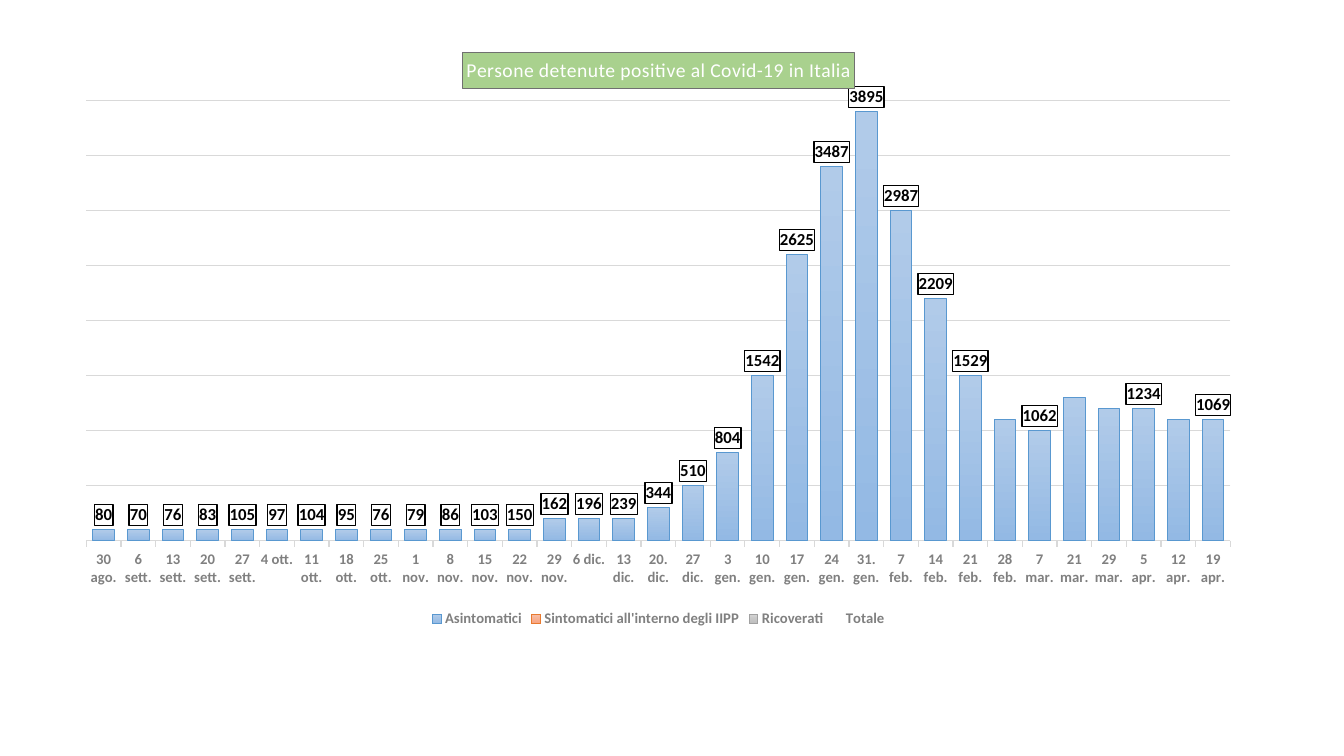
from lxml import etree
from pptx import Presentation
from pptx.chart.data import CategoryChartData
from pptx.dml.color import RGBColor
from pptx.enum.chart import XL_CHART_TYPE, XL_LABEL_POSITION, XL_LEGEND_POSITION, XL_TICK_LABEL_POSITION, XL_TICK_MARK
from pptx.oxml import parse_xml
from pptx.oxml.ns import nsdecls, qn
from pptx.util import Inches, Pt

WHITE = RGBColor(0xFF, 0xFF, 0xFF)
BLACK = RGBColor(0, 0, 0)
GREY = RGBColor(0x80, 0x80, 0x80)
GRID = RGBColor(0xD9, 0xD9, 0xD9)
TITLE_GREEN = RGBColor(0xA9, 0xD1, 0x8E)
TITLE_EDGE = RGBColor(0x70, 0x70, 0x70)
# Top colour, bottom colour and outline of each visible series
BAR_STYLES = [
    (RGBColor(0xB1, 0xCB, 0xE9), RGBColor(0x93, 0xB9, 0xE4), RGBColor(0x59, 0x98, 0xD0)),
    (RGBColor(0xF7, 0xBD, 0xA5), RGBColor(0xF8, 0xA5, 0x82), RGBColor(0xE8, 0x7A, 0x30)),
    (RGBColor(0xD2, 0xD2, 0xD2), RGBColor(0xC0, 0xC0, 0xC0), RGBColor(0xA1, 0xA1, 0xA1)),
]

DATES = [
    "30 ago.", "6 sett.", "13 sett.", "20 sett.", "27 sett.", "4 ott.", "11 ott.",
    "18 ott.", "25 ott.", "1 nov.", "8 nov.", "15 nov.", "22 nov.", "29 nov.",
    "6 dic.", "13 dic.", "20. dic.", "27 dic.", "3 gen.", "10 gen.", "17 gen.",
    "24 gen.", "31. gen.", "7 feb.", "14 feb.", "21 feb.", "28 feb.", "7 mar.",
    "21 mar.", "29 mar.", "5 apr.", "12 apr.", "19 apr.",
]
TOTALS = [
    80, 70, 76, 83, 105, 97, 104, 95, 76, 79, 86, 103, 150, 162, 196, 239, 344,
    510, 804, 1542, 2625, 3487, 3895, 2987, 2209, 1529, 1160, 1062, 1341, 1208,
    1234, 1080, 1069,
]
# Bars without labels are rounded to hundreds
ASYMPTOMATIC = [100] * 13 + [
    200, 200, 200, 300, 500, 800, 1500, 2600, 3400, 3900, 3000, 2200, 1500,
    1100, 1000, 1300, 1200, 1200, 1100, 1100,
]
SYMPTOMATIC = HOSPITALISED = [0] * len(DATES)
UNLABELLED = [26, 28, 29, 31]


def style_font(font, size, color, bold=False):
    font.name, font.size, font.bold = "Calibri", Pt(size), bold
    font.color.rgb = color


def style_line(line, color, width=0.75):
    line.color.rgb = color
    line.width = Pt(width)


def manual_layout(target=None, **shares):
    """Chart layout element with its lengths given as shares of the chart."""
    layout = etree.Element(qn("c:layout"))
    manual = etree.SubElement(layout, qn("c:manualLayout"))
    if target:
        etree.SubElement(manual, qn("c:layoutTarget")).set("val", target)
    for mode in ("xMode", "yMode"):
        etree.SubElement(manual, qn(f"c:{mode}")).set("val", "edge")
    for name, share in shares.items():
        etree.SubElement(manual, qn(f"c:{name}")).set("val", str(share))
    return layout


def place(parent, layout, index):
    for old in parent.findall(qn("c:layout")):
        parent.remove(old)
    parent.insert(index, layout)


def add_title(chart, text, size, color, spacing):
    title = chart.chart_title
    para = title.text_frame.paragraphs[0]
    span = para.add_run()
    span.text = text
    style_font(span.font, size, color)
    span.font._element.set("spc", str(spacing))
    title.format.fill.solid()
    title.format.fill.fore_color.rgb = TITLE_GREEN
    style_line(title.format.line, TITLE_EDGE)
    place(title._element, manual_layout(x=0.336, y=0.028), 1)


def style_axes(chart):
    dates = chart.category_axis
    dates.major_tick_mark = XL_TICK_MARK.OUTSIDE
    dates.tick_label_position = XL_TICK_LABEL_POSITION.LOW
    style_font(dates.tick_labels.font, 10.5, GREY, bold=True)
    style_line(dates.format.line, GRID)
    counts = chart.value_axis
    counts.minimum_scale, counts.maximum_scale, counts.major_unit = 0, 4000, 500
    style_line(counts.major_gridlines.format.line, GRID)
    counts.visible = False


def label_totals(series):
    labels = series.data_labels
    labels.show_value = True
    labels.position = XL_LABEL_POSITION.INSIDE_BASE
    style_font(labels.font, 12, BLACK, bold=True)
    # Framed white boxes
    element = labels._element
    element.find(qn("c:txPr")).addprevious(parse_xml(
        f'<c:spPr {nsdecls("c", "a")}>'
        f'<a:solidFill><a:srgbClr val="{WHITE}"/></a:solidFill>'
        f'<a:ln w="{Pt(1)}"><a:solidFill><a:srgbClr val="{BLACK}"/></a:solidFill></a:ln>'
        '</c:spPr>'))
    # Dates that carry no label
    for position, index in enumerate(UNLABELLED):
        element.insert(position, parse_xml(
            f'<c:dLbl {nsdecls("c")}><c:idx val="{index}"/><c:delete val="1"/></c:dLbl>'))


def add_cases_chart(page, left, top, width, height):
    data = CategoryChartData()
    data.categories = DATES
    data.add_series("Asintomatici", ASYMPTOMATIC)
    data.add_series("Sintomatici all'interno degli IIPP", SYMPTOMATIC)
    data.add_series("Ricoverati", HOSPITALISED)
    data.add_series("Totale", TOTALS)
    chart = page.shapes.add_chart(XL_CHART_TYPE.COLUMN_STACKED, left, top, width, height, data).chart
    style_font(chart.font, 10, BLACK)
    add_title(chart, "Persone detenute positive al Covid-19 in Italia", 14, WHITE, 20)
    style_axes(chart)

    # Stacked bars; the transparent total only carries the labels
    plot = chart.plots[0]
    plot.gap_width, plot.overlap, plot.vary_by_categories = 60, 100, False
    *bars, totals = plot.series
    for series, (upper, lower, edge) in zip(bars, BAR_STYLES):
        fill = series.format.fill
        fill.gradient()
        fill.gradient_angle = 270
        for stop, color, position in zip(fill.gradient_stops, (upper, lower), (0, 1)):
            stop.color.rgb, stop.position = color, position
        style_line(series.format.line, edge)
    totals.format.fill.background()
    totals.format.line.fill.background()
    label_totals(totals)

    # Legend and plot area
    chart.has_legend = True
    chart.legend.position = XL_LEGEND_POSITION.BOTTOM
    chart.legend.include_in_layout = False
    style_font(chart.legend.font, 10.5, GREY, bold=True)
    plot_area = chart._chartSpace.find(".//" + qn("c:plotArea"))
    place(plot_area, manual_layout("inner", x=0.02, y=0.108, w=0.96, h=0.739), 0)


def main():
    deck = Presentation()
    deck.slide_width, deck.slide_height = Inches(13.33), Inches(7.5)
    page = deck.slides.add_slide(deck.slide_layouts[6])
    add_cases_chart(page, Inches(0.62), Inches(0.36), Inches(11.82), Inches(5.91))
    deck.save("out.pptx")


if __name__ == "__main__":
    main()
